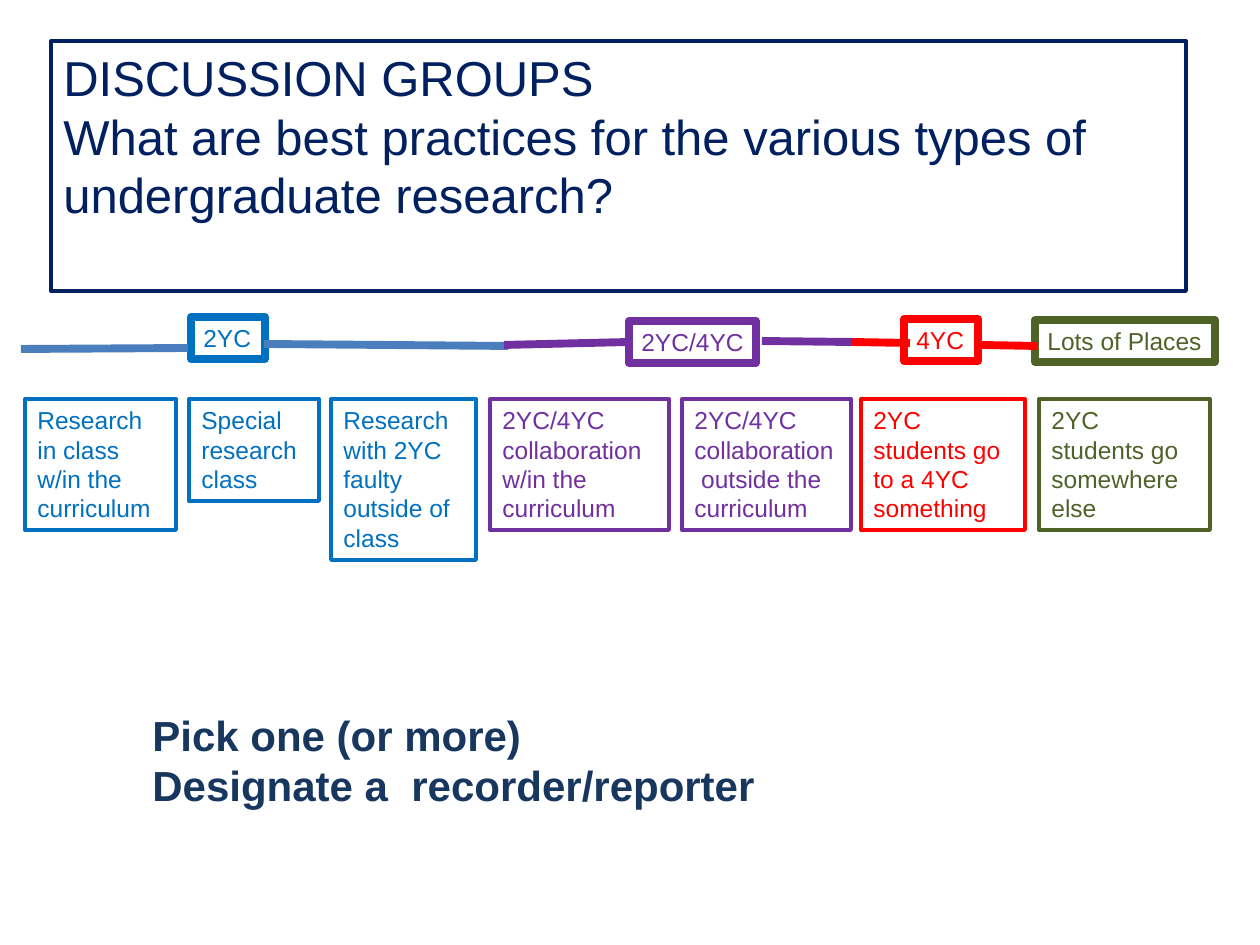
from lxml.etree import SubElement
from pptx import Presentation
from pptx.dml.color import RGBColor
from pptx.enum.shapes import MSO_CONNECTOR, MSO_SHAPE
from pptx.enum.text import MSO_ANCHOR, PP_ALIGN
from pptx.oxml.ns import qn
from pptx.util import Pt

EMU_PER_PX = 914400 / 126
NAVY = RGBColor(0x00, 0x20, 0x60)
BLUE = RGBColor(0x00, 0x70, 0xC0)
STEEL = RGBColor(0x4B, 0x7E, 0xBC)
PURPLE = RGBColor(0x70, 0x30, 0xA0)
RED = RGBColor(0xFF, 0x00, 0x00)
GREEN = RGBColor(0x4F, 0x62, 0x28)
SLATE = RGBColor(0x17, 0x37, 0x5E)

TITLE = ["DISCUSSION GROUPS",
         "What are best practices for the various types of undergraduate research?"]
CARD_TOP = 399
CARDS = [
    (25, 151, 131, BLUE, "Research in class w/in the curriculum"),
    (189, 130, 102, BLUE, "Special research class"),
    (331, 145, 161, BLUE, "Research with 2YC faulty outside of class"),
    (490, 179, 131, PURPLE, "2YC/4YC collaboration w/in the curriculum"),
    (682, 169, 131, PURPLE, "2YC/4YC collaboration  outside the curriculum"),
    (861, 164, 131, RED, "2YC students go to a 4YC something"),
    (1039, 171, 131, GREEN, "2YC students go somewhere else"),
]
LABEL_HEIGHT = 42
LABELS = [
    (191, 317, 74, BLUE, "2YC"),
    (629, 321, 127, PURPLE, "2YC/4YC"),
    (904, 319, 74, RED, "4YC"),
    (1035, 320, 180, GREEN, "Lots of Places"),
]
SEGMENTS = [
    (21, 349, 188, 348, STEEL, None),
    (264, 344, 508, 346, STEEL, None),
    (504, 345, 629, 345, PURPLE, "2YC/4YC"),
    (852, 342, 910, 343, RED, None),
    (762, 341, 852, 342, PURPLE, None),
    (980, 345, 1037, 346, RED, None),
]


def px(*values):
    """Turn pixel lengths into EMU."""
    return [round(v * EMU_PER_PX) for v in values]


class Deck:
    """Hold the text style and the slide being drawn."""

    def __init__(self, prs, font="Arial"):
        self.font = font
        self.s = prs.slides.add_slide(prs.slide_layouts[6])

    def fill_text(self, sp, lines, color, size, wrap=True, bold=False):
        """Fill a shape with left-aligned paragraphs."""
        tf = sp.text_frame
        tf.word_wrap = wrap
        tf.vertical_anchor = MSO_ANCHOR.TOP
        style = {"name": self.font, "size": Pt(size), "bold": bold}
        for i, line in enumerate(lines):
            p = tf.paragraphs[0] if i == 0 else tf.add_paragraph()
            p.alignment = PP_ALIGN.LEFT
            r = p.add_run()
            r.text = line
            r.font.color.rgb = color
            for key, value in style.items():
                setattr(r.font, key, value)

    def box(self, x, y, w, h, color, lines, size=14, weight=2.25, wrap=True):
        """Draw an outlined rectangle with text."""
        sp = self.s.shapes.add_shape(MSO_SHAPE.RECTANGLE, *px(x, y, w, h))
        sp.shadow.inherit = False
        sp.fill.background()
        sp.line.color.rgb = color
        sp.line.width = Pt(weight)
        self.fill_text(sp, lines, color, size, wrap)
        return sp

    def text(self, x, y, w, h, color, lines, size, bold):
        """Place text without an outline."""
        sp = self.s.shapes.add_textbox(*px(x, y, w, h))
        self.fill_text(sp, lines, color, size, wrap=False, bold=bold)

    def segment(self, x1, y1, x2, y2, color, target=None):
        """Draw a timeline segment, joined to the target's left side if given."""
        c = self.s.shapes.add_connector(MSO_CONNECTOR.STRAIGHT, *px(x1, y1, x2, y2))
        if target is not None:
            c.end_connect(target, 1)
        c.line.color.rgb = color
        c.line.width = Pt(4.5)
        SubElement(c._element.spPr, qn("a:effectLst"))


def main():
    """Build and save the slide."""
    prs = Presentation()
    prs.slide_width, prs.slide_height = px(1260, 945)
    deck = Deck(prs)
    deck.box(51, 41, 1135, 250, NAVY, TITLE, size=28)
    for x, w, h, color, text in CARDS:
        deck.box(x, CARD_TOP, w, h, color, [text])
    labels = {text: deck.box(x, y, w, LABEL_HEIGHT, color, [text], weight=4.5, wrap=False)
              for x, y, w, color, text in LABELS}
    for *ends, color, target in SEGMENTS:
        deck.segment(*ends, color, labels.get(target))
    deck.text(140, 703, 634, 115, SLATE,
              ["Pick one (or more)", "Designate a  recorder/reporter"], size=24, bold=True)
    prs.save("out.pptx")


if __name__ == "__main__":
    main()
